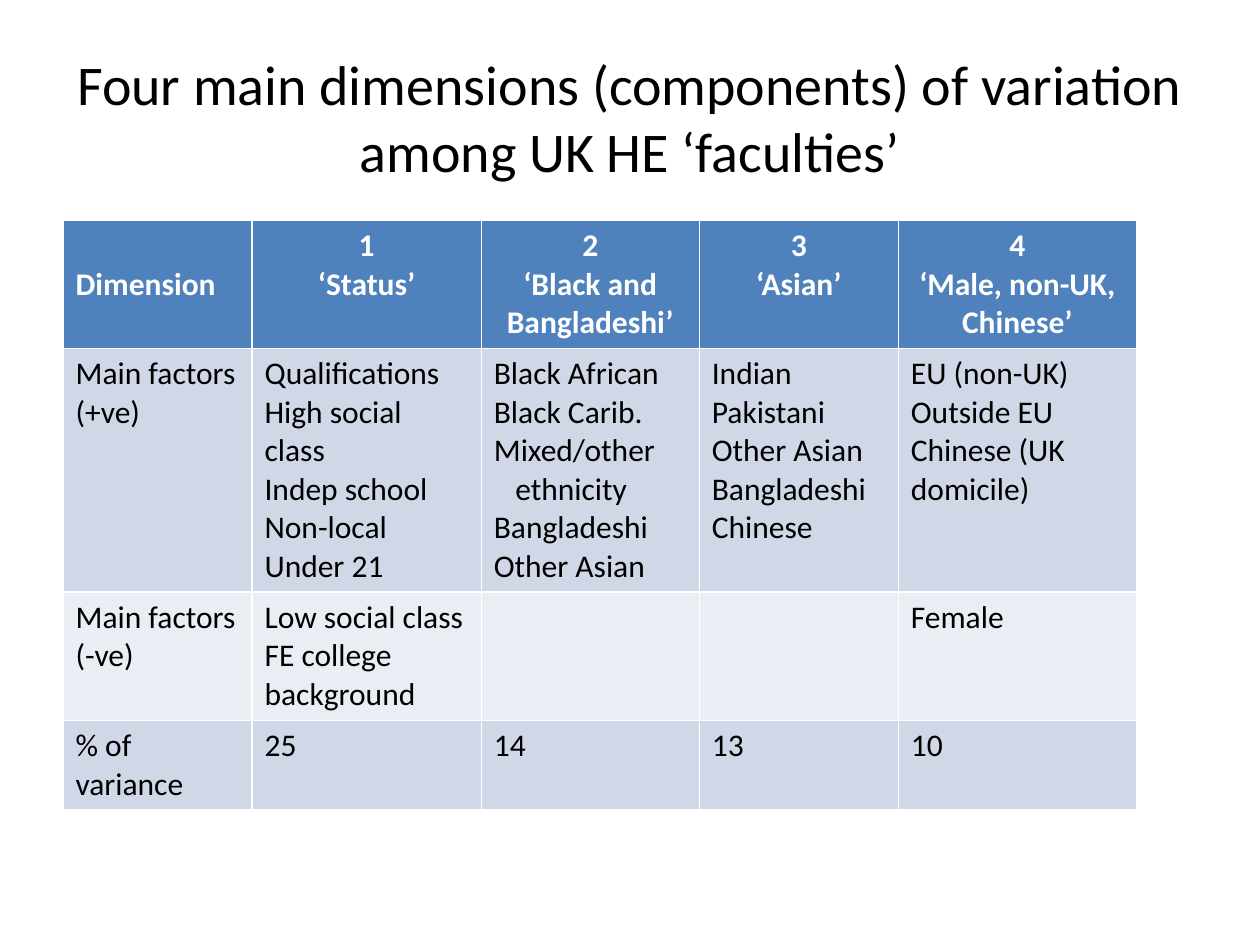
from pptx import Presentation
from pptx.dml.color import RGBColor
from pptx.enum.text import MSO_ANCHOR, PP_ALIGN
from pptx.util import Inches, Pt

FONT = "Calibri"
BLACK = RGBColor(0x00, 0x00, 0x00)
WHITE = RGBColor(0xFF, 0xFF, 0xFF)
HEADER_BLUE = RGBColor(0x4F, 0x81, 0xBD)
BAND_DARK = RGBColor(0xD0, 0xD8, 0xE8)
BAND_LIGHT = RGBColor(0xE9, 0xED, 0xF4)

TITLE = "Four main dimensions (components) of variation among UK HE ‘faculties’"
HANGING_LINE = "Mixed/other ethnicity"
COLUMN_WIDTHS = [1.5, 1.82, 1.73, 1.58, 1.89]
ROW_HEIGHTS = [1.01, 1.93, 1.02, 0.71]
ROWS = [
    [
        ["Dimension"],
        ["1", "‘Status’"],
        ["2", "‘Black and Bangladeshi’"],
        ["3", "‘Asian’"],
        ["4", "‘Male, non-UK, Chinese’"],
    ],
    [
        ["Main factors (+ve)"],
        ["Qualifications", "High social class", "Indep school", "Non-local", "Under 21"],
        ["Black African", "Black Carib.", HANGING_LINE, "Bangladeshi", "Other Asian"],
        ["Indian", "Pakistani", "Other Asian", "Bangladeshi", "Chinese"],
        ["EU (non-UK)", "Outside EU", "Chinese (UK domicile)"],
    ],
    [
        ["Main factors (-ve)"],
        ["Low social class", "FE college background"],
        [],
        [],
        ["Female"],
    ],
    [["% of variance"], ["25"], ["14"], ["13"], ["10"]],
]


def add_run(paragraph, text, size, color, bold=False):
    run = paragraph.add_run()
    run.text = text
    run.font.name = FONT
    run.font.size = Pt(size)
    run.font.bold = bold
    run.font.color.rgb = color


def set_hanging_indent(paragraph, indent):
    properties = paragraph._p.get_or_add_pPr()
    properties.set("marL", str(indent))
    properties.set("indent", str(-indent))


def fill_title(title):
    title.left, title.top = Inches(0.5), Inches(0.3)
    title.width, title.height = Inches(9), Inches(1.25)
    title.text_frame.vertical_anchor = MSO_ANCHOR.MIDDLE
    paragraph = title.text_frame.paragraphs[0]
    paragraph.alignment = PP_ALIGN.CENTER
    add_run(paragraph, TITLE, 32, BLACK)


def fill_cell(cell, lines, row_index, column_index):
    is_header = row_index == 0
    band = BAND_DARK if row_index % 2 else BAND_LIGHT
    cell.fill.solid()
    cell.fill.fore_color.rgb = HEADER_BLUE if is_header else band
    if is_header and column_index == 0:
        cell.vertical_anchor = MSO_ANCHOR.MIDDLE
    frame = cell.text_frame
    for index, line in enumerate(lines):
        paragraph = frame.add_paragraph() if index else frame.paragraphs[0]
        if is_header and column_index:
            paragraph.alignment = PP_ALIGN.CENTER
        if line == HANGING_LINE:
            set_hanging_indent(paragraph, Inches(0.17))
        add_run(paragraph, line, 18, WHITE if is_header else BLACK, is_header)


def add_dimension_table(slide):
    table = slide.shapes.add_table(
        len(ROWS), len(COLUMN_WIDTHS), Inches(0.5), Inches(1.75),
        Inches(sum(COLUMN_WIDTHS)), Inches(sum(ROW_HEIGHTS)),
    ).table
    for column, width in zip(table.columns, COLUMN_WIDTHS):
        column.width = Inches(width)
    for row, height in zip(table.rows, ROW_HEIGHTS):
        row.height = Inches(height)
    for row_index, row in enumerate(ROWS):
        for column_index, lines in enumerate(row):
            fill_cell(table.cell(row_index, column_index), lines, row_index, column_index)


def main():
    presentation = Presentation()
    presentation.slide_width = Inches(10)
    presentation.slide_height = Inches(7.5)
    slide = presentation.slides.add_slide(presentation.slide_layouts[5])
    fill_title(slide.shapes.title)
    add_dimension_table(slide)
    presentation.save("out.pptx")


if __name__ == "__main__":
    main()
